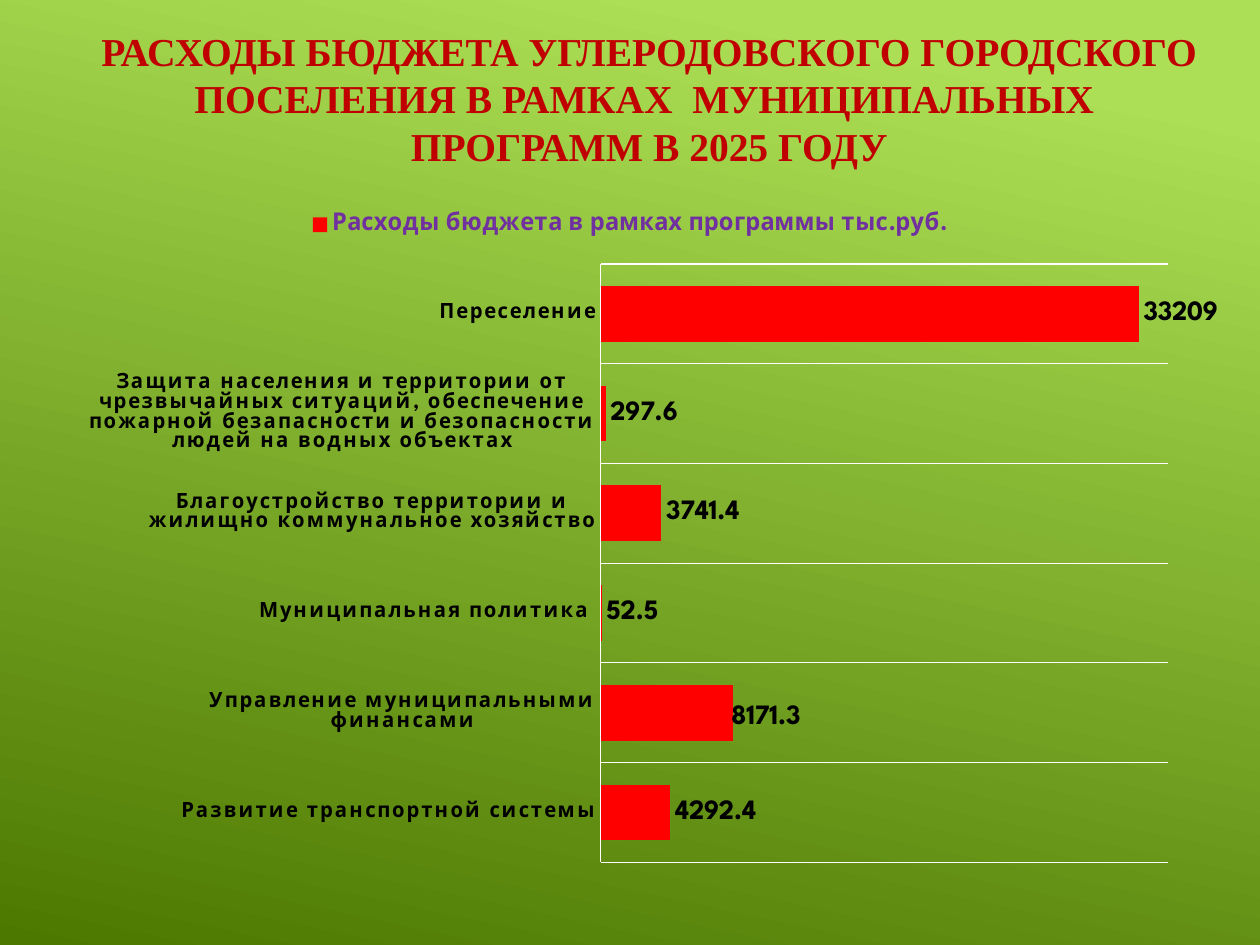
from pptx import Presentation
from pptx.chart.data import CategoryChartData
from pptx.dml.color import RGBColor
from pptx.enum.chart import XL_CHART_TYPE as ChartType
from pptx.enum.chart import XL_LABEL_POSITION as LabelPosition
from pptx.enum.chart import XL_LEGEND_POSITION as LegendPosition
from pptx.enum.chart import XL_TICK_MARK as TickMark
from pptx.enum.text import MSO_ANCHOR, PP_ALIGN
from pptx.oxml import parse_xml
from pptx.oxml.ns import nsdecls
from pptx.util import Pt

COLORS = {
    "light": "ACDF55",
    "dark": "4C7800",
    "title": "C00000",
    "legend": "7030A0",
    "bar": "FF0000",
    "line": "FFFFFF",
    "text": "000000",
}
EXPENSES = {
    "Развитие транспортной системы": 4292.4,
    "Управление муниципальными финансами": 8171.3,
    "Муниципальная политика ": 52.5,
    "Благоустройство территории и жилищно коммунальное хозяйство": 3741.4,
    "Защита населения и территории от чрезвычайных ситуаций, обеспечение "
    "пожарной безапасности и безопасности людей на водных объектах": 297.6,
    "Переселение": 33209,
}


def style_font(font, size, color, name="League Spartan", bold=True):
    font.size = Pt(size)
    font.bold = bold
    font.name = name
    font.color.rgb = RGBColor.from_string(COLORS[color])


def manual_layout(settings):
    tags = "".join(f'<c:{tag} val="{value}"/>' for tag, value in settings.items())
    return parse_xml(
        f'<c:layout {nsdecls("c")}><c:manualLayout>{tags}</c:manualLayout></c:layout>'
    )


presentation = Presentation()
presentation.slide_width, presentation.slide_height = Pt(720), Pt(540)
slide = presentation.slides.add_slide(presentation.slide_layouts[6])

background = slide.background.fill
background.gradient()
background.gradient_angle = 258
for stop, color, position in zip(background.gradient_stops, ("light", "dark"), (0.1, 1)):
    stop.color.rgb = RGBColor.from_string(COLORS[color])
    stop.position = position

title = slide.shapes.add_textbox(Pt(42), Pt(24), Pt(658), Pt(64))
text_frame = title.text_frame
text_frame.word_wrap = True
text_frame.vertical_anchor = MSO_ANCHOR.MIDDLE
text_frame.text = (
    "РАСХОДЫ БЮДЖЕТА УГЛЕРОДОВСКОГО ГОРОДСКОГО ПОСЕЛЕНИЯ "
    "В РАМКАХ  МУНИЦИПАЛЬНЫХ  ПРОГРАММ В 2025 ГОДУ"
)
paragraph = text_frame.paragraphs[0]
paragraph.alignment = PP_ALIGN.CENTER
style_font(paragraph.runs[0].font, 22.6, "title", "Times New Roman")

chart_data = CategoryChartData()
chart_data.categories = list(EXPENSES)
chart_data.add_series("Расходы бюджета в рамках программы тыс.руб.", list(EXPENSES.values()))
chart = slide.shapes.add_chart(
    ChartType.BAR_CLUSTERED, Pt(48), Pt(114), Pt(648), Pt(392.5), chart_data
).chart
style_font(chart.font, 10, "line", bold=False)
chart.has_title = False
chart.has_legend = True
chart.legend.position = LegendPosition.TOP
chart.legend.include_in_layout = False
style_font(chart.legend.font, 14, "legend")

category_axis = chart.category_axis
category_axis.major_tick_mark = TickMark.NONE
category_axis.minor_tick_mark = TickMark.NONE
category_axis.has_major_gridlines = True
for line in (category_axis.format.line, category_axis.major_gridlines.format.line):
    line.color.rgb = RGBColor.from_string(COLORS["line"])
    line.width = Pt(0.75)
style_font(category_axis.tick_labels.font, 12, "text")
for properties in chart.element.xpath(".//c:catAx//a:defRPr"):
    properties.set("spc", "120")

value_axis = chart.value_axis
value_axis.visible = False
value_axis.has_major_gridlines = False
value_axis.minimum_scale = 0
value_axis.maximum_scale = 35000

plot = chart.plots[0]
plot.gap_width = 79
plot.vary_by_categories = False
series = plot.series[0]
series.format.fill.solid()
series.format.fill.fore_color.rgb = RGBColor.from_string(COLORS["bar"])
series.data_labels.show_value = True
for labels in (series.data_labels, series.points[1].data_label):
    labels.position = LabelPosition.OUTSIDE_END
    style_font(labels.font, 16, "text")

label_index = chart.element.xpath(".//c:dLbl/c:idx")[0]
label_index.addnext(manual_layout({"x": -0.006, "y": 0.008}))

plot_area = chart.element.xpath(".//c:plotArea")[0]
for layout in plot_area.xpath("./c:layout"):
    plot_area.remove(layout)
plot_area.insert(0, manual_layout({
    "layoutTarget": "inner", "xMode": "edge", "yMode": "edge",
    "x": 0.473, "y": 0.094, "w": 0.519, "h": 0.871,
}))

presentation.save("out.pptx")
